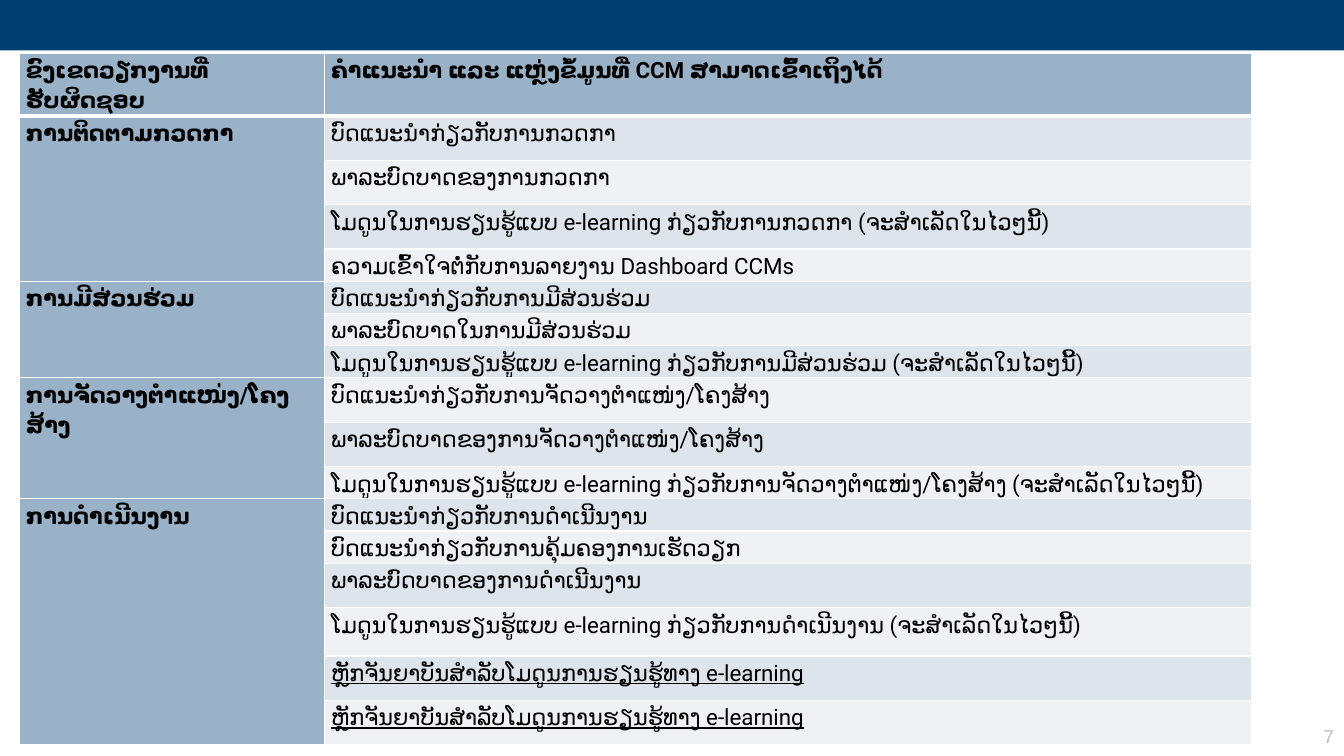
from lxml.etree import SubElement
from pptx import Presentation
from pptx.dml.color import RGBColor
from pptx.enum.shapes import MSO_SHAPE
from pptx.enum.text import MSO_ANCHOR, PP_ALIGN
from pptx.oxml.ns import qn
from pptx.util import Pt

COLORS = {"bar": "003F72", "head": "99B2C7", "odd": "DEE4EB", "even": "EFF2F5",
          "border": "FFFFFF", "text": "000000", "number": "BFBFBF"}
CELL = {"margin_left": Pt(4.5), "margin_top": Pt(0.72), "margin_right": Pt(4.5),
        "margin_bottom": Pt(0)}
PARA = {"line_spacing": 1.15, "space_after": Pt(10)}
TALL, MID, SHORT = 31.68, 34.56, 23.04
COLUMNS = (218, 662)
HEADER = ("ຂົງເຂດວຽກງານທີ່ຮັບຜິດຊອບ", "ຄຳແນະນຳ ແລະ ແຫຼ່ງຂໍ້ມູນທີ່ CCM ສາມາດເຂົ້າເຖິງໄດ້")
AREAS = [
    ("ການຕິດຕາມກວດກາ", [
        ("ບົດແນະນຳກ່ຽວກັບການກວດກາ", TALL),
        ("ພາລະບົດບາດຂອງການກວດກາ", TALL),
        ("ໂມດູນໃນການຮຽນຮູ້ແບບ e-learning ກ່ຽວກັບການກວດກາ (ຈະສຳເລັດໃນໄວໆນີ້)", TALL),
        ("ຄວາມເຂົ້າໃຈຕໍ່ກັບການລາຍງານ Dashboard CCMs", SHORT)]),
    ("ການມີສ່ວນຮ່ວມ", [
        ("ບົດແນະນຳກ່ຽວກັບການມີສ່ວນຮ່ວມ", SHORT),
        ("ພາລະບົດບາດໃນການມີສ່ວນຮ່ວມ", SHORT),
        ("ໂມດູນໃນການຮຽນຮູ້ແບບ e-learning ກ່ຽວກັບການມີສ່ວນຮ່ວມ (ຈະສຳເລັດໃນໄວໆນີ້)", SHORT)]),
    ("ການຈັດວາງຕໍາແໜ່ງ/ໂຄງສ້າງ", [
        ("ບົດແນະນຳກ່ຽວກັບການຈັດວາງຕໍາແໜ່ງ/ໂຄງສ້າງ", TALL),
        ("ພາລະບົດບາດຂອງການຈັດວາງຕໍາແໜ່ງ/ໂຄງສ້າງ", TALL),
        ("ໂມດູນໃນການຮຽນຮູ້ແບບ e-learning ກ່ຽວກັບການຈັດວາງຕໍາແໜ່ງ/ໂຄງສ້າງ (ຈະສຳເລັດໃນໄວໆນີ້)",
         SHORT)]),
    ("ການດຳເນີນງານ", [
        ("ບົດແນະນຳກ່ຽວກັບການດຳເນີນງານ", SHORT),
        ("ບົດແນະນຳກ່ຽວກັບການຄຸ້ມຄອງການເຮັດວຽກ", SHORT),
        ("ພາລະບົດບາດຂອງການດຳເນີນງານ", TALL),
        ("ໂມດູນໃນການຮຽນຮູ້ແບບ e-learning ກ່ຽວກັບການດຳເນີນງານ (ຈະສຳເລັດໃນໄວໆນີ້)", MID)]
     + [("ຫຼັກຈັນຍາບັນສຳລັບໂມດູນການຮຽນຮູ້ທາງ e-learning", TALL)] * 2),
]
UNDERLINED_ROWS = (15, 16)


def set_attrs(obj, values):
    """Set every attribute of a dict of format values."""
    for name, value in values.items():
        setattr(obj, name, value)


def add_text(tf, text, color, para, font):
    """Write one formatted run in the first paragraph of a text frame."""
    p = tf.paragraphs[0]
    set_attrs(p, para)
    r = p.add_run()
    r.text = text
    set_attrs(r.font, font)
    r.font.color.rgb = RGBColor.from_string(COLORS[color])
    SubElement(r.font._element, qn("a:cs"), typeface=font["name"])


def add_borders(cell, bottom):
    """Draw the four cell borders, ahead of the cell fill."""
    tc_pr = cell._tc.get_or_add_tcPr()
    for side, width in (("L", 1), ("R", 1), ("T", 1), ("B", bottom)):
        ln = SubElement(tc_pr, qn(f"a:ln{side}"), w=str(Pt(width)))
        fill = SubElement(ln, qn("a:solidFill"))
        SubElement(fill, qn("a:srgbClr"), val=COLORS["border"])


def fill_cell(cell, text, fill, bold=False, underline=None, bottom=1):
    """Format a table cell and write its text."""
    set_attrs(cell, CELL)
    add_borders(cell, bottom)
    cell.fill.solid()
    cell.fill.fore_color.rgb = RGBColor.from_string(COLORS[fill])
    if text:
        add_text(cell.text_frame, text, "text", PARA,
                 {"name": "Roboto", "size": Pt(16), "bold": bold, "underline": underline})


def add_bar(s, x, y, w, h):
    """Draw the band across the top."""
    sp = s.shapes.add_shape(MSO_SHAPE.RECTANGLE, Pt(x), Pt(y), Pt(w), Pt(h))
    sp.shadow.inherit = False
    sp.fill.solid()
    sp.fill.fore_color.rgb = RGBColor.from_string(COLORS["bar"])
    sp.line.fill.background()


def add_number(s, x, y, w, h):
    """Place the slide number."""
    tf = s.shapes.add_textbox(Pt(x), Pt(y), Pt(w), Pt(h)).text_frame
    set_attrs(tf, {"word_wrap": True, "vertical_anchor": MSO_ANCHOR.MIDDLE})
    add_text(tf, "7", "number", {"alignment": PP_ALIGN.RIGHT},
             {"name": "Arial", "size": Pt(13.3)})


def add_areas(s, x, y):
    """Build the table of work areas and their resources."""
    heights = [TALL] + [h for _, items in AREAS for _, h in items]
    table = s.shapes.add_table(len(heights), 2, Pt(x), Pt(y), Pt(sum(COLUMNS)),
                               Pt(sum(heights))).table
    for column, width in zip(table.columns, COLUMNS):
        column.width = Pt(width)
    for row, height in zip(table.rows, heights):
        row.height = Pt(height)
    for c, title in enumerate(HEADER):
        fill_cell(table.cell(0, c), title, "head", bold=True, bottom=3)
    r = 1
    for area, items in AREAS:
        first = r
        for text, _ in items:
            fill_cell(table.cell(r, 0), area if r == first else "", "head", bold=True)
            fill_cell(table.cell(r, 1), text, "odd" if r % 2 else "even",
                      underline=r in UNDERLINED_ROWS)
            r += 1
        table.cell(first, 0).merge(table.cell(r - 1, 0))


def main():
    """Build and save the slide."""
    prs = Presentation()
    prs.slide_width, prs.slide_height = Pt(960), Pt(540)
    s = prs.slides.add_slide(prs.slide_layouts[6])
    add_bar(s, 0, 0, 960, 36)
    add_number(s, 736, 511, 224, 29)
    add_areas(s, 14, 38)
    prs.save("out.pptx")


if __name__ == "__main__":
    main()
